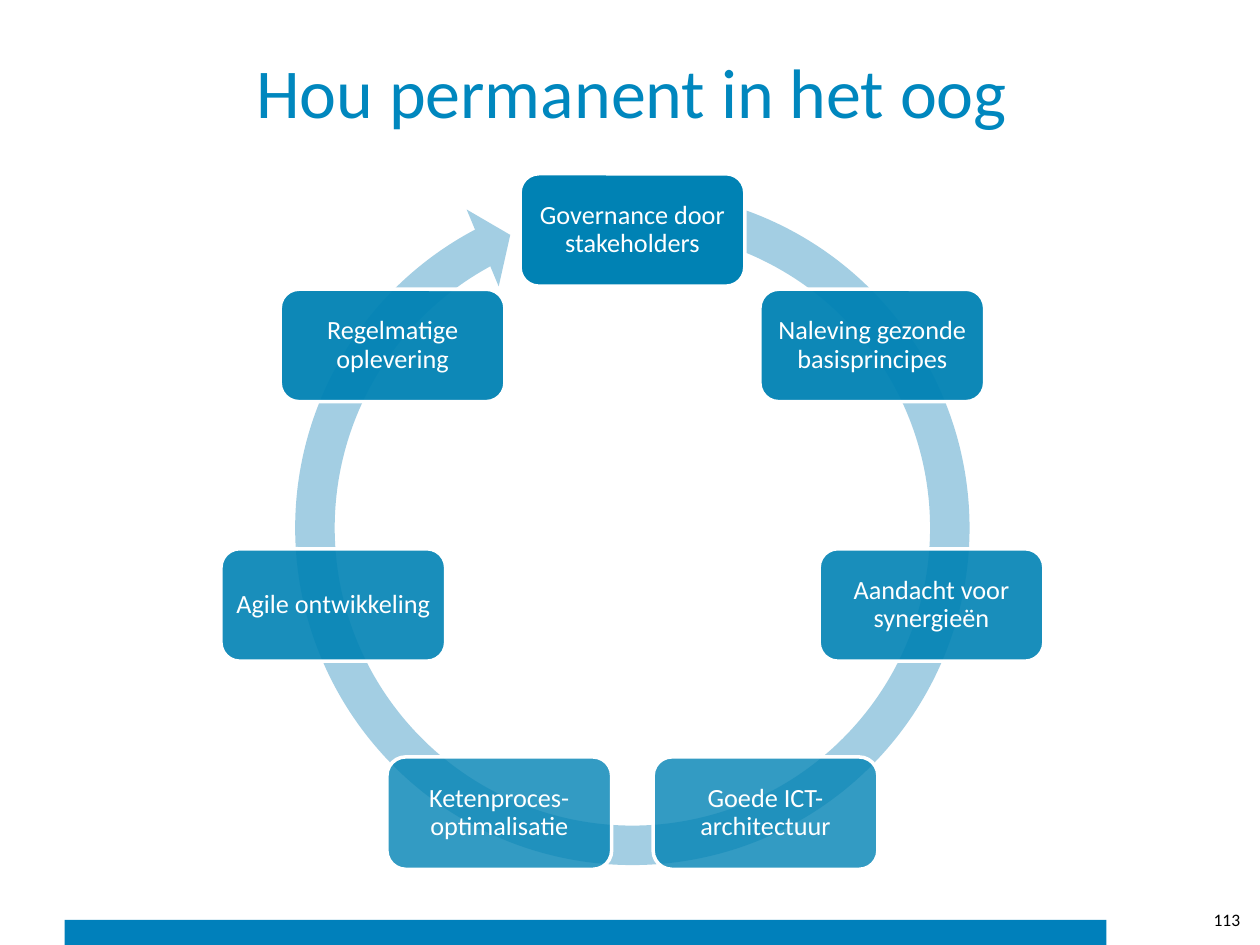
"""Build a slide with a seven-step cycle of points to keep in view."""
from dataclasses import dataclass
from math import cos, pi, sin

from lxml import etree
from pptx import Presentation
from pptx.dml.color import RGBColor
from pptx.enum.shapes import MSO_SHAPE
from pptx.enum.text import MSO_ANCHOR, PP_ALIGN
from pptx.oxml.ns import qn
from pptx.util import Pt

RECTANGLE = MSO_SHAPE.RECTANGLE
ROUNDED = MSO_SHAPE.ROUNDED_RECTANGLE
CIRCULAR_ARROW = MSO_SHAPE.CIRCULAR_ARROW
MIDDLE = MSO_ANCHOR.MIDDLE
CENTER, RIGHT = PP_ALIGN.CENTER, PP_ALIGN.RIGHT

FONT = "Calibri"
WHITE = "FFFFFF"
CENTER_X, CENTER_Y, RADIUS = 361.4, 306.7, 175.3
STEP_WIDTH, STEP_HEIGHT, STEP_INSET = 128.4, 64.2, 4.5
ARROW_ADJUSTMENTS = (0.055, 3.307, 145.117, 169.526, 0.058)


@dataclass(frozen=True)
class Area:
    """A rectangle on the slide, in points."""

    left: float
    top: float
    width: float
    height: float

    def lengths(self) -> list:
        """Return the position and size as lengths."""
        return [Pt(v) for v in (self.left, self.top, self.width, self.height)]


@dataclass(frozen=True)
class Step:
    """A step of the cycle, with its opacity in percent."""

    label: str
    opacity: int


@dataclass(frozen=True)
class TextStyle:
    """The look of a single paragraph."""

    size: float
    color: str
    align: PP_ALIGN
    spacing: float = 1.0


TITLE_STYLE = TextStyle(40, "0087BE", CENTER)
NUMBER_STYLE = TextStyle(10, "000000", RIGHT)
STEP_STYLE = TextStyle(15, WHITE, CENTER, 0.9)

STEPS = [
    Step("Governance door stakeholders", 100),
    Step("Naleving gezonde basisprincipes", 95),
    Step("Aandacht voor synergieën", 90),
    Step("Goede ICT-architectuur", 80),
    Step("Ketenproces-optimalisatie", 80),
    Step("Agile ontwikkeling", 90),
    Step("Regelmatige oplevering", 95),
]


def rgb(color: str) -> RGBColor:
    """Turn a hex string into a colour."""
    return RGBColor.from_string(color)


def add_filled(page, kind, area: Area, color: str, opacity: int = 100):
    """Add a shape without outline or shadow and return it."""
    shape = page.shapes.add_shape(kind, *area.lengths())
    shape.shadow.inherit = False
    shape.line.fill.background()
    shape.fill.solid()
    shape.fill.fore_color.rgb = rgb(color)
    if opacity < 100:
        value = shape.fill._xPr.find(f".//{qn('a:srgbClr')}")
        etree.SubElement(value, qn("a:alpha"), val=str(opacity * 1000))
    return shape


def write_text(frame, text: str, style: TextStyle) -> None:
    """Write one paragraph, centred vertically in its frame."""
    frame.word_wrap = True
    frame.vertical_anchor = MIDDLE
    para = frame.paragraphs[0]
    para.text = text
    para.alignment = style.align
    para.line_spacing = style.spacing
    para.font.name = FONT
    para.font.size = Pt(style.size)
    para.font.color.rgb = rgb(style.color)


def add_text(page, area: Area, text: str, style: TextStyle) -> None:
    """Add a text box."""
    box = page.shapes.add_textbox(*area.lengths())
    write_text(box.text_frame, text, style)


def add_step(page, step: Step, angle: float) -> None:
    """Add a step at an angle clockwise from the top of the cycle."""
    left = CENTER_X + RADIUS * sin(angle) - STEP_WIDTH / 2
    top = CENTER_Y - RADIUS * cos(angle) - STEP_HEIGHT / 2
    area = Area(left, top, STEP_WIDTH, STEP_HEIGHT)
    box = add_filled(page, ROUNDED, area, "0082B4", step.opacity)
    box.line.color.rgb = rgb(WHITE)
    box.line.width = Pt(2)
    frame = box.text_frame
    frame.margin_left = frame.margin_right = Pt(STEP_INSET)
    frame.margin_top = frame.margin_bottom = Pt(STEP_INSET)
    write_text(frame, step.label, STEP_STYLE)


def add_cycle(page) -> None:
    """Add the circular arrow and the steps around it."""
    area = Area(156.2, 96.5, 410.4, 410.4)
    arrow = add_filled(page, CIRCULAR_ARROW, area, "0078B2", 36)
    for index, value in enumerate(ARROW_ADJUSTMENTS):
        arrow.adjustments[index] = value
    for index, step in enumerate(STEPS):
        add_step(page, step, 2 * pi * index / len(STEPS))


def main() -> None:
    """Build and save the deck."""
    deck = Presentation()
    deck.slide_width, deck.slide_height = Pt(720), Pt(540)
    page = deck.slides.add_slide(deck.slide_layouts[6])
    add_filled(page, RECTANGLE, Area(36.9, 525.6, 595.3, 14.4), "0080BB")
    add_text(page, Area(36.9, 15.1, 648, 72.7), "Hou permanent in het oog", TITLE_STYLE)
    add_text(page, Area(656.7, 511.2, 59, 28.8), "113", NUMBER_STYLE)
    add_cycle(page)
    deck.save("out.pptx")


if __name__ == "__main__":
    main()
